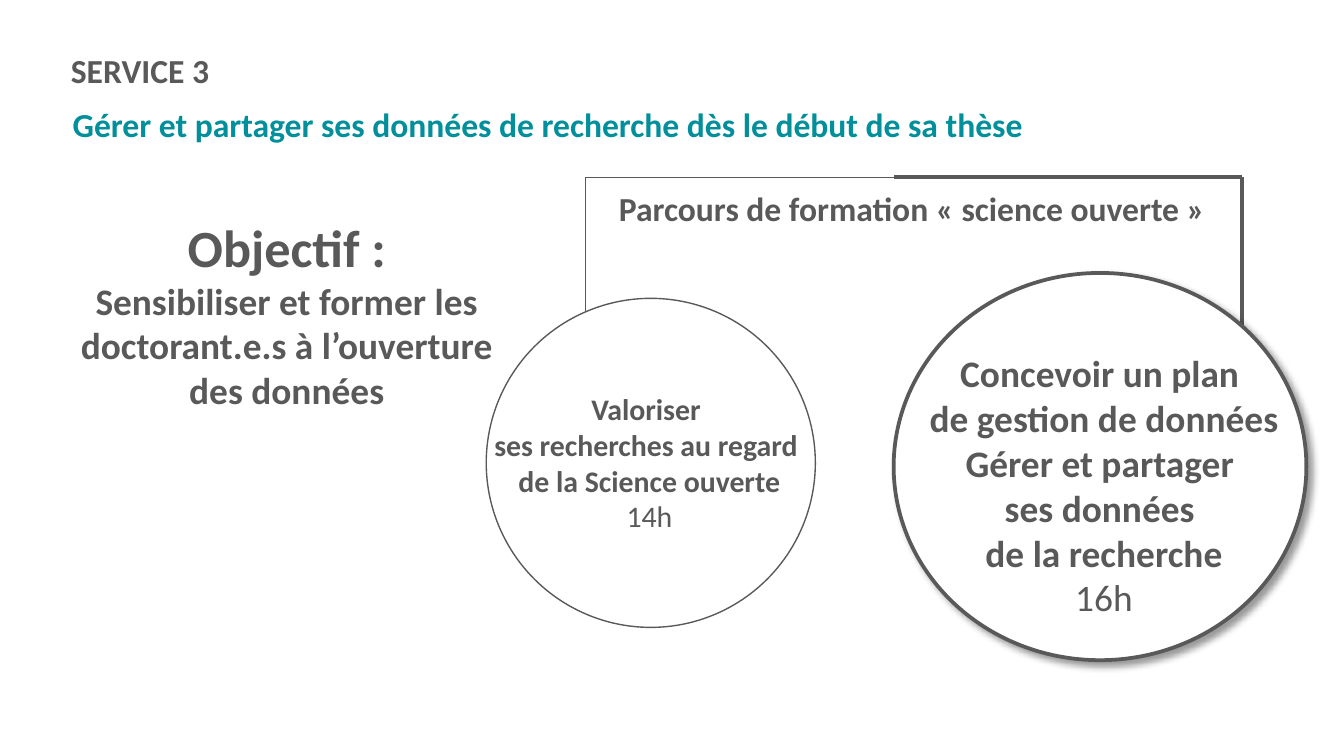
import dataclasses

import lxml.etree
import pptx
import pptx.dml.color
import pptx.enum.shapes
import pptx.enum.text
import pptx.oxml
import pptx.oxml.ns
import pptx.util

Cm = pptx.util.Cm
Pt = pptx.util.Pt
ALIGN = pptx.enum.text.PP_ALIGN


@dataclasses.dataclass(frozen=True)
class Theme:
    font: str = "Calibri"
    grey: str = "595959"
    teal: str = "008F9B"
    white: str = "FFFFFF"
    heading: int = 18
    objective: int = 28
    large: int = 20
    small: int = 16
    thin: float = 0.75
    outline: float = 2
    thick: float = 2.25


THEME = Theme()


@dataclasses.dataclass(frozen=True)
class Box:
    left: float
    top: float
    width: float
    height: float

    def inner(self, left, top, width, height):
        return Box(self.left + left, self.top + top, width, height)

    def lengths(self):
        return [Cm(value) for value in dataclasses.astuple(self)]


def colour(name):
    return pptx.dml.color.RGBColor.from_string(name)


def fill_text(shape, lines, align, wrap=True, tint=THEME.grey):
    frame = shape.text_frame
    frame.word_wrap = wrap
    frame.auto_size = pptx.enum.text.MSO_AUTO_SIZE.SHAPE_TO_FIT_TEXT
    frame.vertical_anchor = pptx.enum.text.MSO_ANCHOR.TOP
    for index, (words, size, bold) in enumerate(lines):
        para = frame.add_paragraph() if index else frame.paragraphs[0]
        para.text = words
        para.alignment = align
        para.space_before = Pt(0)
        para.font.name = THEME.font
        para.font.size = Pt(size)
        para.font.bold = bold
        para.font.color.rgb = colour(tint)


def add_text(page, box, lines, align=ALIGN.CENTER, wrap=True):
    shape = page.shapes.add_textbox(*box.lengths())
    fill_text(shape, lines, align, wrap)


def add_line(page, start, end, weight):
    line = page.shapes.add_connector(
        pptx.enum.shapes.MSO_CONNECTOR.STRAIGHT, *map(Cm, start + end))
    line.line.color.rgb = colour(THEME.grey)
    line.line.width = Pt(weight)
    lxml.etree.SubElement(line._element.spPr, pptx.oxml.ns.qn("a:effectLst"))


def add_shadow(shape):
    effects = shape._element.spPr.find(pptx.oxml.ns.qn("a:effectLst"))
    effects.append(pptx.oxml.parse_xml(
        f'<a:outerShdw {pptx.oxml.ns.nsdecls("a")} blurRad="{Pt(4)}" dist="{Pt(3)}" '
        'dir="2700000" algn="tl" rotWithShape="0">'
        '<a:srgbClr val="000000"><a:alpha val="40000"/></a:srgbClr></a:outerShdw>'))


def build_header(page, box):
    title = page.shapes.title
    title.left, title.top, title.width, title.height = box.inner(0.03, 1.02, 19.2, 1.02).lengths()
    fill_text(title, [("Gérer et partager ses données de recherche dès le début de sa thèse",
                       THEME.heading, True)], ALIGN.LEFT, False, THEME.teal)
    add_text(page, box.inner(0, 0, 3.15, 1.02),
             [("SERVICE 3", THEME.heading, True)], ALIGN.LEFT, False)


def build_objective(page, box):
    add_text(page, box, [
        ("Objectif :", THEME.objective, True),
        ("Sensibiliser et former les doctorant.e.s à l’ouverture des données", THEME.large, True),
    ])


def build_bracket(page, box):
    right = box.left + box.width
    middle = box.left + 5.82
    add_line(page, (box.left, box.top + box.height), (box.left, box.top), THEME.thin)
    add_line(page, (middle, box.top), (box.left, box.top), THEME.thin)
    add_line(page, (right, box.top), (middle, box.top), THEME.thick)
    add_line(page, (right, box.top + 2.97), (right, box.top), THEME.thick)
    add_text(page, box.inner(-0.33, 0.08, 13, 1.02),
             [("Parcours de formation « science ouverte »", THEME.heading, True)])


def build_course(page, box, text_box, lines, hours, size, weight, shadow=False):
    ellipse = page.shapes.add_shape(pptx.enum.shapes.MSO_SHAPE.OVAL, *box.lengths())
    ellipse.shadow.inherit = False
    ellipse.fill.solid()
    ellipse.fill.fore_color.rgb = colour(THEME.white)
    ellipse.line.color.rgb = colour(THEME.grey)
    ellipse.line.width = Pt(weight)
    if shadow:
        add_shadow(ellipse)
    add_text(page, text_box, [(line, size, True) for line in lines] + [(hours, size, False)])


def main():
    deck = pptx.Presentation()
    deck.slide_width, deck.slide_height = Cm(25.4), Cm(14.29)
    page = deck.slides.add_slide(deck.slide_layouts.get_by_name("Title Only"))

    build_header(page, Box(1.09, 0.81, 19.23, 2.04))
    build_objective(page, Box(0.91, 3.94, 9.02, 4.01))
    build_bracket(page, Box(11.07, 3.35, 12.4, 3.2))

    basics = Box(9.19, 5.64, 6.22, 6.22)
    build_course(page, basics, basics.inner(-0.33, 1.62, 6.83, 3),
                 ["Valoriser ", "ses recherches au regard ", "de la Science ouverte"],
                 "14h", THEME.small, THEME.thin)
    planning = Box(16.89, 5.16, 7.8, 7.32)
    build_course(page, planning, planning.inner(0.38, 1.34, 7.19, 5.38),
                 ["Concevoir un plan ", "de gestion de données", "Gérer et partager ",
                  "ses données ", "de la recherche"],
                 "16h", THEME.large, THEME.outline, shadow=True)
    deck.save("out.pptx")


if __name__ == "__main__":
    main()
